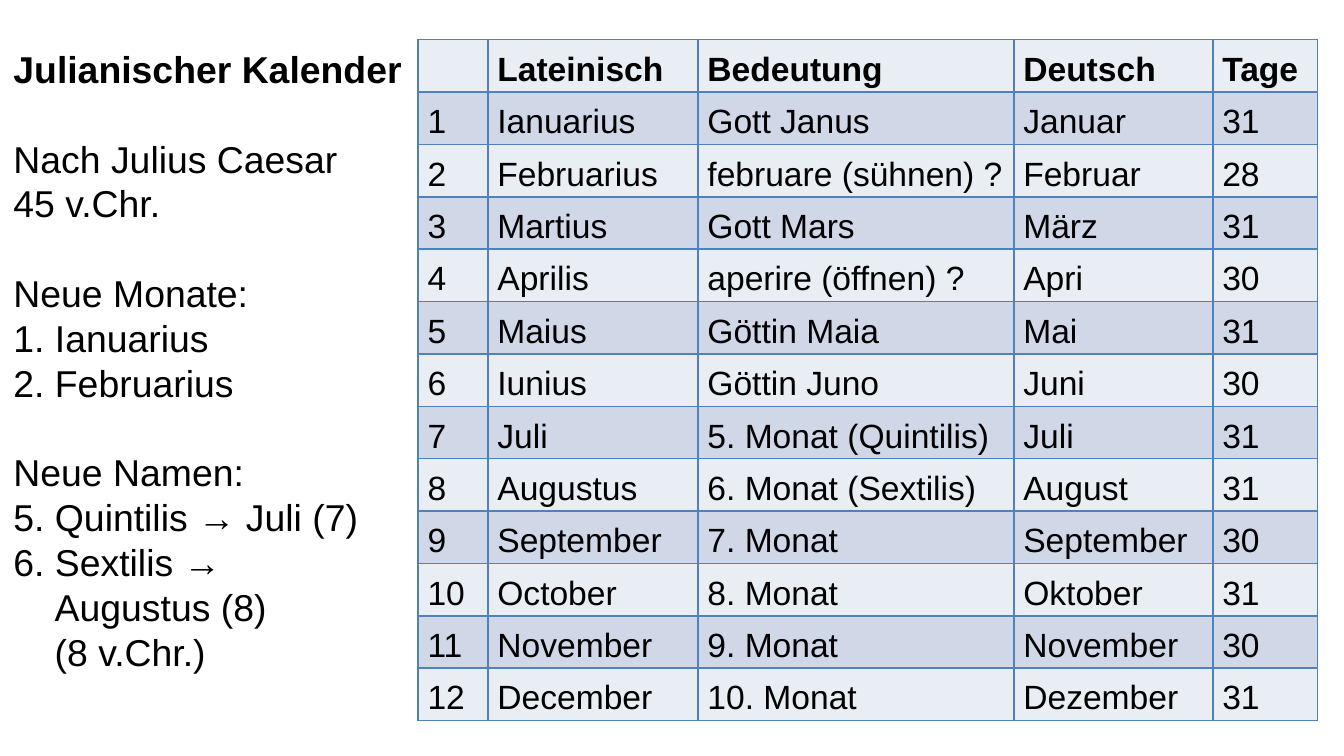
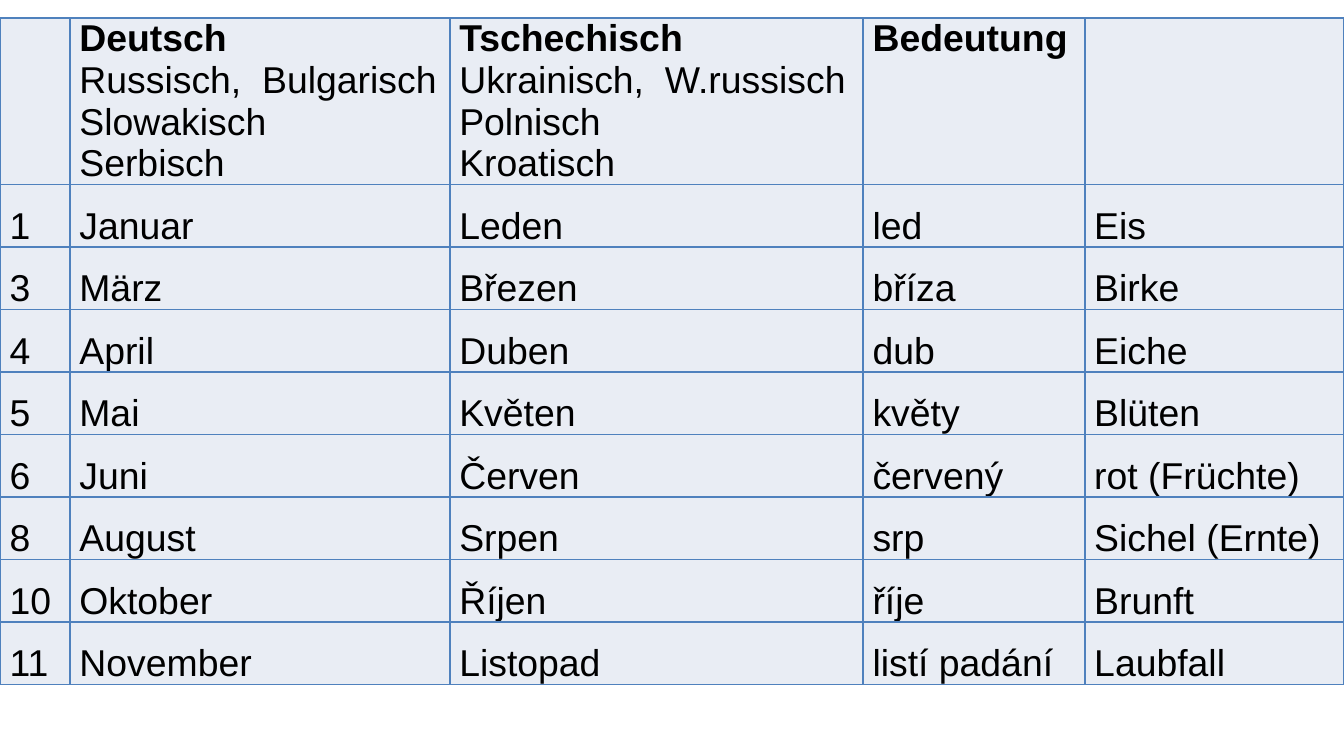
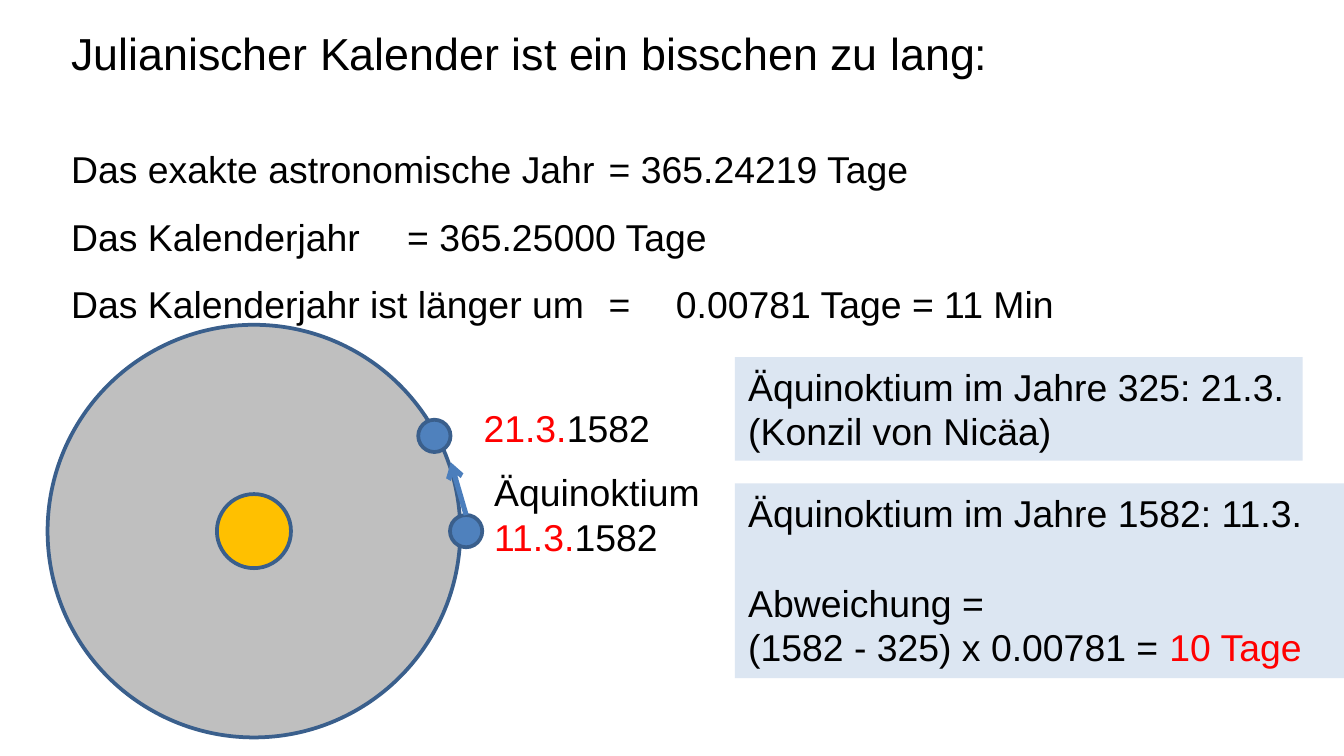
from pptx import Presentation
from pptx.dml.color import RGBColor
from pptx.enum.shapes import MSO_CONNECTOR, MSO_SHAPE
from pptx.enum.text import MSO_ANCHOR, MSO_AUTO_SIZE, PP_ALIGN
from pptx.oxml.ns import qn
from pptx.oxml.xmlchemy import OxmlElement
from pptx.util import Cm, Pt

FONT = "Arial"
BLACK, RED = "000000", "FF0000"
LIGHT, DARK, BORDER = "E9EDF4", "D0D8E8", "4F81BD"
PANEL, OUTLINE, ARROW = "DCE6F2", "3A5F8C", "4B7EBC"
GREY, SUN, EARTH = "BFBFBF", "FFC000", "4F81BD"
LINE = 1.2  # line pitch in ems

MONTHS = [
    ("", "Lateinisch", "Bedeutung", "Deutsch", "Tage"),
    ("1", "Ianuarius", "Gott Janus", "Januar", "31"),
    ("2", "Februarius", "februare (sühnen) ?", "Februar", "28"),
    ("3", "Martius", "Gott Mars", "März", "31"),
    ("4", "Aprilis", "aperire (öffnen) ?", "Apri", "30"),
    ("5", "Maius", "Göttin Maia", "Mai", "31"),
    ("6", "Iunius", "Göttin Juno", "Juni", "30"),
    ("7", "Juli", "5. Monat (Quintilis)", "Juli", "31"),
    ("8", "Augustus", "6. Monat (Sextilis)", "August", "31"),
    ("9", "September", "7. Monat", "September", "30"),
    ("10", "October", "8. Monat", "Oktober", "31"),
    ("11", "November", "9. Monat", "November", "30"),
    ("12", "December", "10. Monat", "Dezember", "31"),
]
SLAVIC = [
    ("", "Deutsch\nRussisch,  Bulgarisch Slowakisch\nSerbisch",
     "Tschechisch\nUkrainisch,  W.russisch\nPolnisch\nKroatisch", "Bedeutung", ""),
    ("1", "Januar", "Leden", "led", "Eis"),
    ("3", "März", "Březen", "bříza", "Birke"),
    ("4", "April", "Duben", "dub", "Eiche"),
    ("5", "Mai", "Květen", "květy", "Blüten"),
    ("6", "Juni", "Červen", "červený", "rot (Früchte)"),
    ("8", "August", "Srpen", "srp", "Sichel (Ernte)"),
    ("10", "Oktober", "Říjen", "říje", "Brunft"),
    ("11", "November", "Listopad", "listí padání", "Laubfall"),
]


def tint(code):
    return RGBColor.from_string(code)


def child(parent, tag, **attrs):
    node = OxmlElement(tag)
    for key, value in attrs.items():
        node.set(key, str(value))
    parent.append(node)
    return node


def style(par, size, bold=False):
    for font in [par.font, *(run.font for run in par.runs)]:
        font.name, font.size, font.bold = FONT, Pt(size), bold
        if font.color.type is None:
            font.color.rgb = tint(BLACK)


def write(frame, lines, size=20, bold=False, pitch=1, gaps=(), inset=(), tabs=()):
    """Fill a frame; a line is a string or (text, colour) runs.

    Lines numbered in gaps follow an empty line; those in inset are indented.
    """
    frame.word_wrap = True
    frame.auto_size = MSO_AUTO_SIZE.NONE
    frame.vertical_anchor = MSO_ANCHOR.TOP
    step = Pt(size * LINE)
    for num, line in enumerate(lines):
        par = frame.paragraphs[0] if num == 0 else frame.add_paragraph()
        for text, code in [(line, BLACK)] if isinstance(line, str) else line:
            run = par.add_run()
            run.text = text
            run.font.color.rgb = tint(code)
        props = par._p.get_or_add_pPr()
        props.set("marL", str(Cm(0.78) if num in inset else 0))
        props.set("indent", "0")
        child(props, "a:buNone")
        if tabs:
            stops = child(props, "a:tabLst")
            for stop in tabs:
                child(stops, "a:tab", pos=Cm(stop), algn="l")
        par.alignment = PP_ALIGN.LEFT
        par.line_spacing = Pt(size * LINE * pitch)
        par.space_before = step if num in gaps else Pt(0)
        style(par, size, bold)


def place(shape, box):
    shape.left, shape.top, shape.width, shape.height = map(Cm, box)
    return shape.text_frame


def label(slide, box, lines, fill=None, gaps=()):
    shape = slide.shapes.add_textbox(*map(Cm, box))
    if fill:
        shape.fill.solid()
        shape.fill.fore_color.rgb = tint(fill)
    write(shape.text_frame, lines, gaps=gaps)


def frame_cell(cell):
    """Draw the four borders; they must stand before the fill."""
    props = cell._tc.get_or_add_tcPr()
    for side in ("a:lnL", "a:lnR", "a:lnT", "a:lnB"):
        line = child(props, side, w=Pt(1))
        child(child(line, "a:solidFill"), "a:srgbClr", val=BORDER)


def grid(slide, left, top, cols, heights, data, size, pitch, before, fills):
    shape = slide.shapes.add_table(
        len(data), len(cols), Cm(left), Cm(top), Cm(sum(cols)), Cm(sum(heights)))
    table = shape.table
    table.first_row = table.horz_banding = False
    for col, width in zip(table.columns, cols):
        col.width = Cm(width)
    for row, height in zip(table.rows, heights):
        row.height = Cm(height)
    for r, texts in enumerate(data):
        for c, text in enumerate(texts):
            cell = table.cell(r, c)
            cell.margin_left = cell.margin_right = Cm(0.18)
            cell.margin_top = cell.margin_bottom = 0
            frame_cell(cell)
            cell.fill.solid()
            cell.fill.fore_color.rgb = tint(fills[r % len(fills)])
            cell.text = text
            for num, par in enumerate(cell.text_frame.paragraphs):
                par.space_before = Pt(before)
                if r or len(fills) > 1:
                    par.line_spacing = pitch
                style(par, size, bold=r == 0 and num == 0)


def disc(slide, x, y, size, fill):
    """Add a circle around the point x, y."""
    shape = slide.shapes.add_shape(
        MSO_SHAPE.OVAL, Cm(x - size / 2), Cm(y - size / 2), Cm(size), Cm(size))
    shape.shadow.inherit = False
    shape.fill.solid()
    shape.fill.fore_color.rgb = tint(fill)
    shape.line.color.rgb = tint(OUTLINE)
    shape.line.width = Pt(2)
    return shape


def orbit(slide, x, y):
    """Draw the sun at x, y with the orbit and two places of the earth."""
    disc(slide, x, y, 7.8, GREY)
    disc(slide, x, y, 1.4, SUN)
    disc(slide, x + 3.41, y - 1.8, 0.61, EARTH)
    start = disc(slide, x + 4.01, y, 0.61, EARTH)
    arrow = slide.shapes.add_connector(
        MSO_CONNECTOR.STRAIGHT, 0, 0, Cm(x + 3.72), Cm(y - 1.3))
    arrow.begin_connect(start, 0)
    arrow.line.color.rgb = tint(ARROW)
    arrow.line.width = Pt(2.75)
    child(arrow.line._get_or_add_ln(), "a:tailEnd", type="arrow")
    child(arrow._element.find(qn("p:spPr")), "a:effectLst")
    label(slide, (x + 4.29, y - 1.3, 4.45, 1.96),
          ["Äquinoktium", [("11.3.", RED), ("1582", BLACK)]])
    label(slide, (x + 4.09, y - 2.5, 3.68, 1.12), [[("21.3.", RED), ("1582", BLACK)]])


def julian(slide):
    title, body = slide.placeholders
    write(place(title, (0, 0.74, 7.92, 1.1)), ["Julianischer Kalender"], bold=True)
    write(place(body, (0, 2.44, 7.9, 10.5)), [
        "Nach Julius Caesar", "45 v.Chr.",
        "Neue Monate:", "1. Ianuarius", "2. Februarius",
        "Neue Namen:", "5. Quintilis → Juli (7)", "6. Sextilis →",
        "Augustus (8)", "(8 v.Chr.)",
    ], gaps=(2, 5), inset=(8, 9))
    grid(slide, 7.9, 0.75, (1.32, 3.97, 5.97, 3.76, 1.98), [0.99] * len(MONTHS),
         MONTHS, 18, 1.3, 6, (LIGHT, DARK))


def slavic(slide):
    heights = [3.15] + [1.18] * (len(SLAVIC) - 1)
    grid(slide, 0, 0.34, (1.32, 7.18, 7.81, 4.19, 4.9), heights,
         SLAVIC, 20, 1.5, 0, (LIGHT,))


def drift(slide):
    title, body = slide.placeholders
    write(place(title, (1.09, 0.35, 23.7, 1.27)),
          ["Julianischer Kalender ist ein bisschen zu lang:"], size=24)
    write(place(body, (1.09, 2.22, 23.7, 4.1)), [
        "Das exakte astronomische Jahr\t= 365.24219 Tage",
        "Das Kalenderjahr\t= 365.25000 Tage",
        "Das Kalenderjahr ist länger um\t=\t0.00781 Tage = 11 Min",
    ], pitch=1.5, tabs=(10.16, 11.56))
    orbit(slide, 4.8, 10.04)
    label(slide, (13.89, 9.14, 11.51, 3.68), [
        "Äquinoktium im Jahre 1582: 11.3.", "Abweichung =",
        [("(1582 - 325) x 0.00781 = ", BLACK), ("10 Tage", RED)],
    ], PANEL, gaps=(1,))
    label(slide, (13.89, 6.75, 10.73, 1.96),
          ["Äquinoktium im Jahre 325: 21.3.", "(Konzil von Nicäa)"], PANEL)


def main():
    deck = Presentation()
    deck.slide_width, deck.slide_height = Cm(25.4), Cm(14.29)
    for build, layout in ((julian, 1), (slavic, 6), (drift, 1)):
        build(deck.slides.add_slide(deck.slide_layouts[layout]))
    deck.save("out.pptx")


if __name__ == "__main__":
    main()
